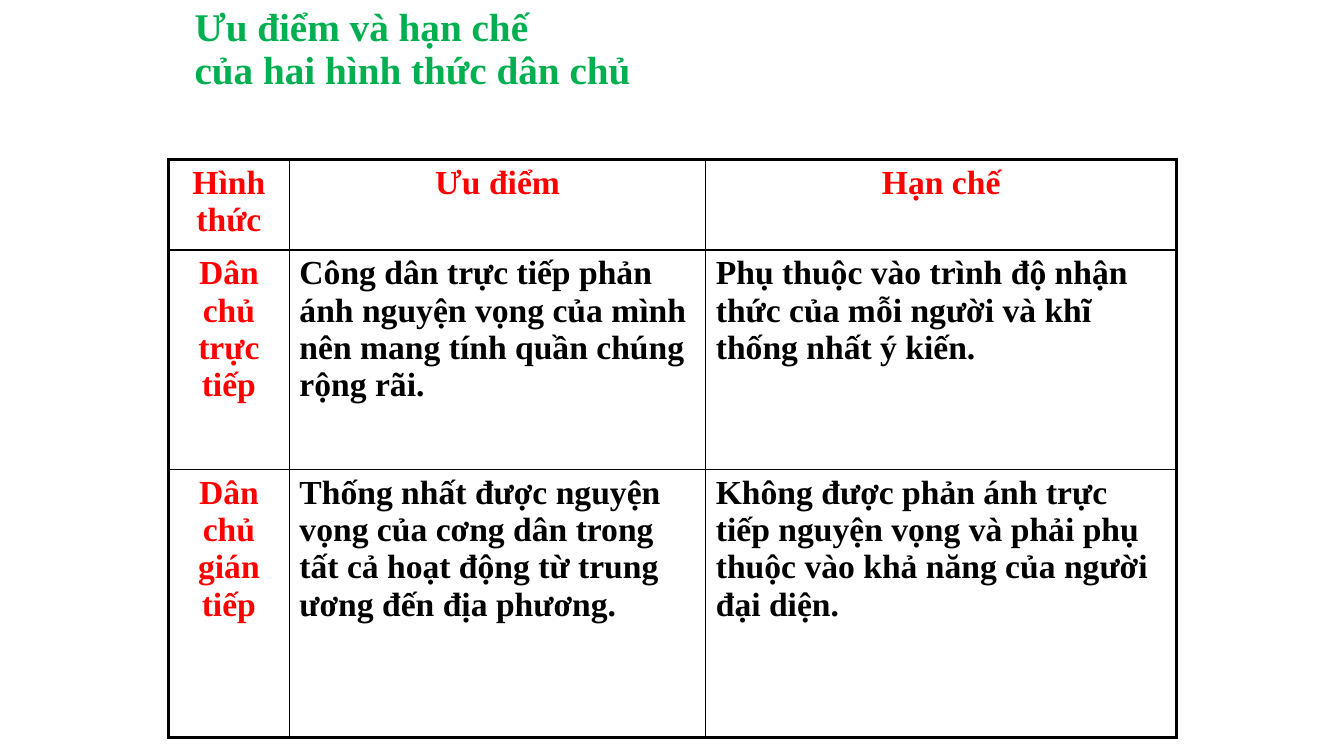
from lxml import etree
from pptx import Presentation
from pptx import util as u
from pptx.dml.color import RGBColor
from pptx.enum import text
from pptx.oxml.ns import qn

TITLE = "Ưu điểm và hạn chế\ncủa hai hình thức dân chủ"
ROWS = [
    ("Hình thức", "Ưu điểm", "Hạn chế"),
    ("Dân chủ trực tiếp",
     "Công dân trực tiếp phản ánh nguyện vọng của mình nên mang tính quần chúng rộng rãi.",
     "Phụ thuộc vào trình độ nhận thức của mỗi người và khĩ thống nhất ý kiến."),
    ("Dân chủ gián tiếp",
     "Thống nhất được nguyện vọng của cơng dân trong tất cả hoạt động từ trung ương đến địa phương.",
     "Không được phản ánh trực tiếp nguyện vọng và phải phụ thuộc vào khả năng của người đại diện."),
]
COLUMN_WIDTHS = (1.2, 4.13, 4.67)
ROW_HEIGHTS = (0.9, 2.18, 2.66)

FONT = "Times New Roman"
GREEN = RGBColor(0x00, 0xB0, 0x50)
RED = RGBColor(0xFF, 0x00, 0x00)
BLACK = RGBColor(0x00, 0x00, 0x00)
OUTER_LINE, INNER_LINE = 2.25, 1


def write(frame, content, size, color, align=text.PP_ALIGN.LEFT, spacing=None):
    """Fill a text frame, one paragraph per line of content."""
    frame.word_wrap = True
    frame.text = content
    for paragraph in frame.paragraphs:
        paragraph.alignment = align
        paragraph.line_spacing = spacing
        for run in paragraph.runs:
            run.font.name = FONT
            run.font.size = u.Pt(size)
            run.font.bold = True
            run.font.color.rgb = color


def set_borders(cell, widths):
    """Draw the borders; widths are points for left, right, top, bottom."""
    properties = cell._tc.get_or_add_tcPr()
    for index, (side, width) in enumerate(zip("LRTB", widths)):
        line = etree.Element(qn("a:ln" + side), w=str(u.Pt(width)))
        fill = etree.SubElement(line, qn("a:solidFill"))
        etree.SubElement(fill, qn("a:srgbClr"), val=str(BLACK))
        properties.insert(index, line)


presentation = Presentation()
presentation.slide_width = u.Inches(13.33)
presentation.slide_height = u.Inches(7.5)
slide = presentation.slides.add_slide(presentation.slide_layouts[5])

# Title
title = slide.shapes.title
title.left, title.top = u.Inches(1.83), u.Inches(0)
title.width, title.height = u.Inches(9.75), u.Inches(1.42)
title.text_frame.vertical_anchor = text.MSO_ANCHOR.TOP
title.text_frame.margin_top = u.Inches(0.08)
write(title.text_frame, TITLE, 28, GREEN, spacing=0.9)

# Comparison table
table = slide.shapes.add_table(
    len(ROWS), len(COLUMN_WIDTHS), u.Inches(1.67), u.Inches(1.58),
    u.Inches(sum(COLUMN_WIDTHS)), u.Inches(sum(ROW_HEIGHTS))).table
table.horz_banding = False
for column, width in zip(table.columns, COLUMN_WIDTHS):
    column.width = u.Inches(width)
for row, height in zip(table.rows, ROW_HEIGHTS):
    row.height = u.Inches(height)

last_row, last_column = len(ROWS) - 1, len(COLUMN_WIDTHS) - 1
for r, row_texts in enumerate(ROWS):
    for c, content in enumerate(row_texts):
        cell = table.cell(r, c)
        heading = r == 0 or c == 0
        cell.fill.background()
        write(cell.text_frame, content, 24, RED if heading else BLACK,
              align=text.PP_ALIGN.CENTER if heading else text.PP_ALIGN.LEFT)
        on_edge = (c == 0, c == last_column, r == 0, r == last_row)
        set_borders(cell, [OUTER_LINE if edge else INNER_LINE for edge in on_edge])

presentation.save("out.pptx")
